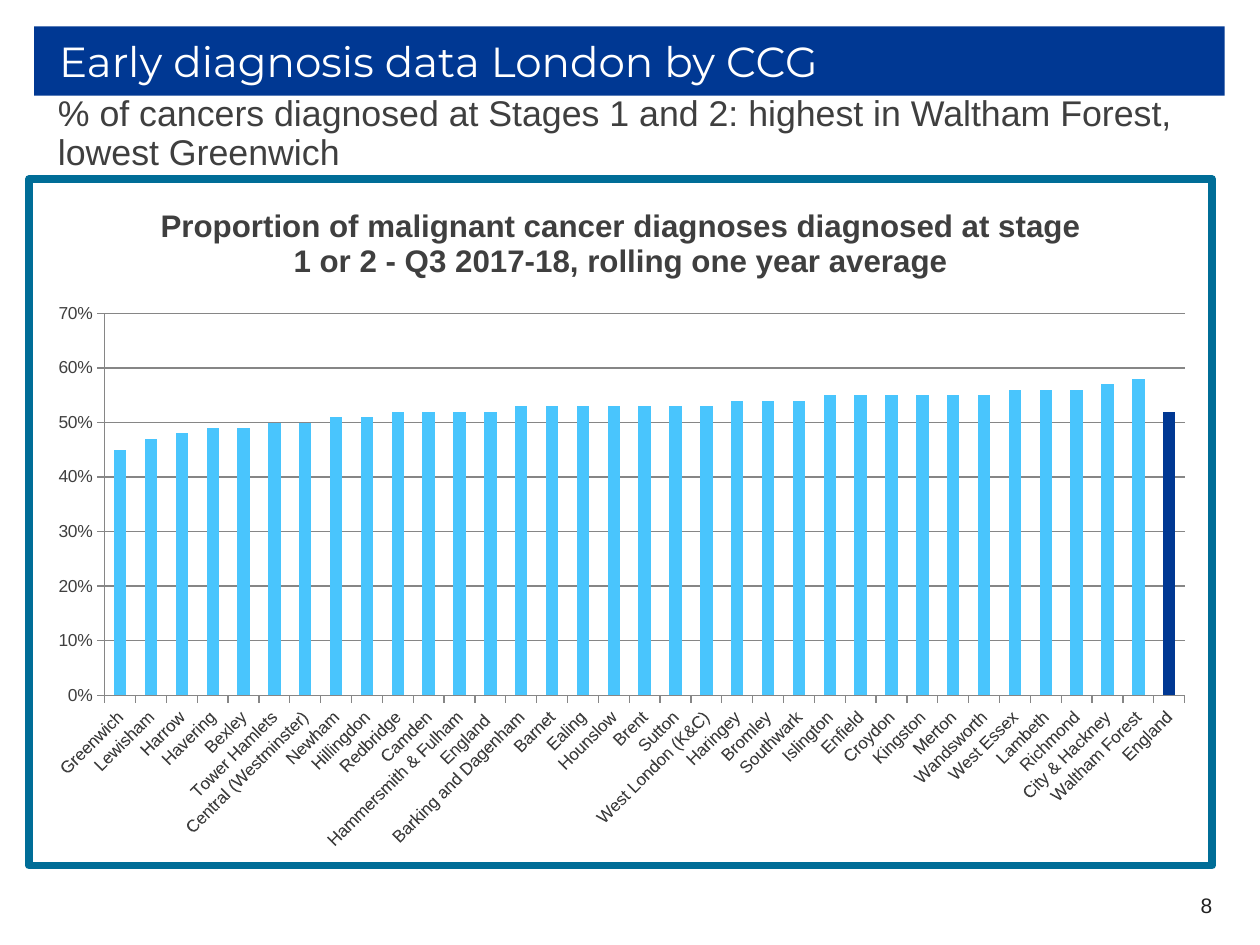
from dataclasses import dataclass

from lxml import etree
from pptx import Presentation
from pptx.chart.data import CategoryChartData
from pptx.dml.color import RGBColor
from pptx.enum.chart import XL_CHART_TYPE, XL_TICK_MARK
from pptx.enum.text import MSO_ANCHOR, MSO_AUTO_SIZE, PP_ALIGN
from pptx.oxml import parse_xml
from pptx.oxml.ns import nsdecls, qn
from pptx.util import Inches, Pt

COLUMNS = XL_CHART_TYPE.COLUMN_CLUSTERED
OUTSIDE = XL_TICK_MARK.OUTSIDE
TOP, MIDDLE = MSO_ANCHOR.TOP, MSO_ANCHOR.MIDDLE
LEFT, RIGHT = PP_ALIGN.LEFT, PP_ALIGN.RIGHT
NO_FIT = MSO_AUTO_SIZE.NONE


@dataclass
class Theme:
    navy: str = "003893"
    sky: str = "49C5FD"
    teal: str = "006D97"
    gray: str = "3F3F3F"
    grid: str = "868686"
    white: str = "FFFFFF"
    ink: str = "202020"
    heading_font: str = "Montserrat"
    text_font: str = "Arial"
    heading: float = 24
    message: float = 20.4
    chart_title: float = 18
    page: float = 12
    axis: float = 10


theme = Theme()


def style_font(font, face, size, color, bold=False):
    values = {"name": face, "size": Pt(size), "bold": bold}
    for key, value in values.items():
        setattr(font, key, value)
    font.color.rgb = RGBColor.from_string(color)


def write_text(shape, text, box, frame_format, paragraph_format, font, indent=0):
    for key, value in zip(("left", "top", "width", "height"), box):
        setattr(shape, key, Inches(value))
    frame = shape.text_frame
    frame.text = text
    for key, value in {"word_wrap": True, "auto_size": NO_FIT, **frame_format}.items():
        setattr(frame, key, value)
    paragraph = frame.paragraphs[0]
    for key, value in paragraph_format.items():
        setattr(paragraph, key, value)
    style_font(paragraph.runs[0].font, *font)
    properties = paragraph._p.get_or_add_pPr()
    properties.set("marL", str(Inches(indent)))
    properties.set("indent", "0")
    etree.SubElement(properties, qn("a:buNone"))


prs = Presentation()
prs.slide_width, prs.slide_height = Inches(10), Inches(7.5)
slide = prs.slides.add_slide(prs.slide_layouts[1])

heading = slide.shapes.title
heading.fill.solid()
heading.fill.fore_color.rgb = RGBColor.from_string(theme.navy)
write_text(
    heading, "Early diagnosis data London by CCG", (0.27, 0.21, 9.45, 0.55),
    {"vertical_anchor": MIDDLE}, {"alignment": LEFT},
    (theme.heading_font, theme.heading, theme.white), 0.1)

no_margins = {f"margin_{side}": 0 for side in ("left", "top", "right", "bottom")}
write_text(
    slide.placeholders[1],
    "% of cancers diagnosed at Stages 1 and 2: highest in Waltham Forest, lowest Greenwich",
    (0.27, 0.76, 9.45, 0.63), {"vertical_anchor": TOP, **no_margins},
    {"alignment": LEFT, "line_spacing": 0.9, "space_before": Pt(0), "space_after": Pt(6)},
    (theme.text_font, theme.message, theme.gray), 0.19)

page_box = (7.39, 6.98, 2.33, 0.4)
page_number = slide.shapes.add_textbox(*map(Inches, page_box))
write_text(
    page_number, "8", page_box, {"vertical_anchor": MIDDLE}, {"alignment": RIGHT},
    (theme.text_font, theme.page, theme.ink))

stage_share = [
    ("Greenwich", 0.45), ("Lewisham", 0.47), ("Harrow", 0.48), ("Havering", 0.49),
    ("Bexley", 0.49), ("Tower Hamlets", 0.5), ("Central (Westminster)", 0.5),
    ("Newham", 0.51), ("Hillingdon", 0.51), ("Redbridge", 0.52), ("Camden", 0.52),
    ("Hammersmith & Fulham", 0.52), ("England ", 0.52), ("Barking and Dagenham", 0.53),
    ("Barnet", 0.53), ("Ealing", 0.53), ("Hounslow", 0.53), ("Brent", 0.53),
    ("Sutton", 0.53), ("West London (K&C)", 0.53), ("Haringey", 0.54),
    ("Bromley", 0.54), ("Southwark", 0.54), ("Islington", 0.55), ("Enfield", 0.55),
    ("Croydon", 0.55), ("Kingston", 0.55), ("Merton", 0.55), ("Wandsworth", 0.55),
    ("West Essex", 0.56), ("Lambeth", 0.56), ("Richmond", 0.56),
    ("City & Hackney", 0.57), ("Waltham Forest", 0.58), ("England", 0.52),
]
chart_heading = ("Proportion of malignant cancer diagnoses diagnosed at stage 1 or 2"
                 " - Q3 2017-18, rolling one year average")
areas, shares = zip(*stage_share)
data = CategoryChartData(number_format="0%")
data.categories = areas
data.add_series(chart_heading, shares)
chart = slide.shapes.add_chart(
    COLUMNS, Inches(0.2), Inches(1.39), Inches(9.45), Inches(5.51), data).chart
style_font(chart.font, theme.text_font, theme.axis, theme.gray)
chart.has_legend = False
chart.has_title = True
chart.chart_title.include_in_layout = False
chart.chart_title.text_frame.text = chart_heading
style_font(chart.chart_title.text_frame.paragraphs[0].runs[0].font,
           theme.text_font, theme.chart_title, theme.gray, True)

plot = chart.plots[0]
plot.gap_width = 150
plot.vary_by_categories = False
columns = plot.series[0]
england = columns.points[len(areas) - 1]
for bar, color in ((columns, theme.sky), (england, theme.navy)):
    bar.format.fill.solid()
    bar.format.fill.fore_color.rgb = RGBColor.from_string(color)

area_axis, share_axis = chart.category_axis, chart.value_axis
share_format = {"minimum_scale": 0, "maximum_scale": 0.7, "major_unit": 0.1,
                "has_major_gridlines": True}
for key, value in share_format.items():
    setattr(share_axis, key, value)
share_axis.tick_labels.number_format = "0%"
share_axis.tick_labels.number_format_is_linked = False
for axis in (area_axis, share_axis):
    axis.major_tick_mark = OUTSIDE
    style_font(axis.tick_labels.font, theme.text_font, theme.axis, theme.gray)
for line in (area_axis.format.line, share_axis.format.line,
             share_axis.major_gridlines.format.line):
    line.color.rgb = RGBColor.from_string(theme.grid)
    line.width = Pt(0.75)

chart_space = chart._chartSpace
label_body = chart_space.find(f".//{qn('c:catAx')}/{qn('c:txPr')}/{qn('a:bodyPr')}")
label_body.set("rot", str(-45 * 60000))
label_body.set("vert", "horz")

plot_area = chart_space.find(f".//{qn('c:plotArea')}")
for layout in plot_area.findall(qn("c:layout")):
    plot_area.remove(layout)
plot_area.insert(0, parse_xml(
    f'<c:layout {nsdecls("c")}><c:manualLayout><c:layoutTarget val="inner"/>'
    '<c:xMode val="edge"/><c:yMode val="edge"/><c:x val="0.064"/><c:y val="0.196"/>'
    '<c:w val="0.913"/><c:h val="0.556"/></c:manualLayout></c:layout>'))
chart_space.find(qn("c:chart")).addnext(parse_xml(
    f'<c:spPr {nsdecls("c", "a")}><a:solidFill><a:srgbClr val="{theme.white}"/></a:solidFill>'
    f'<a:ln w="{Pt(4.5)}"><a:solidFill><a:srgbClr val="{theme.teal}"/></a:solidFill>'
    '<a:round/></a:ln></c:spPr>'))

prs.save("out.pptx")
